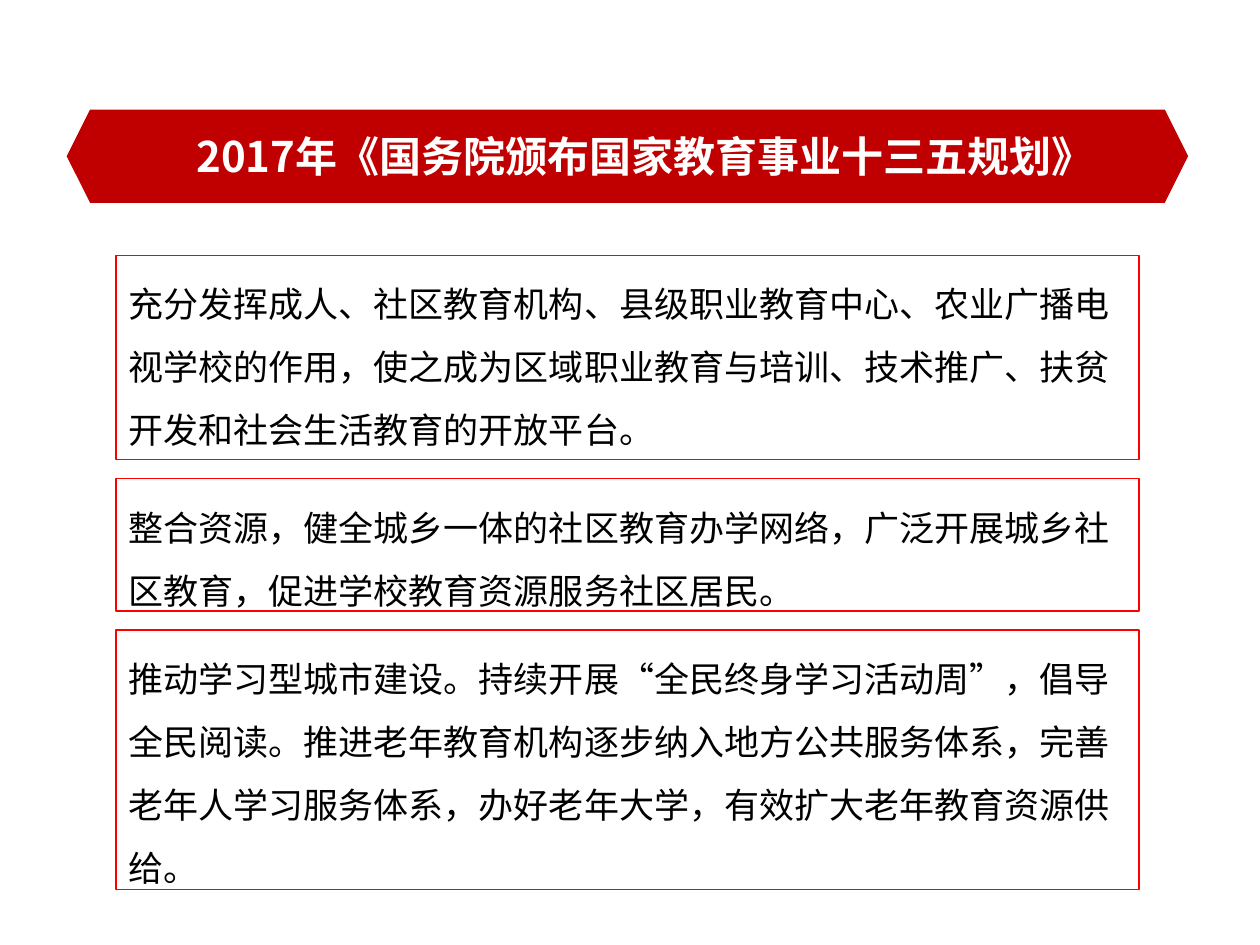
from pptx import Presentation
from pptx.dml.color import RGBColor
from pptx.enum.shapes import MSO_SHAPE
from pptx.enum.text import MSO_ANCHOR, MSO_AUTO_SIZE, PP_ALIGN
from pptx.oxml.ns import qn
from pptx.util import Inches, Pt

RECTANGLE, HEXAGON = MSO_SHAPE.RECTANGLE, MSO_SHAPE.HEXAGON
TOP, LEFT = MSO_ANCHOR.TOP, PP_ALIGN.LEFT
GROW = MSO_AUTO_SIZE.SHAPE_TO_FIT_TEXT

COLORS = {"banner": "C00000", "border": "FF0000", "body": "000000", "title": "FFFFFF"}
FONT = "Noto Sans CJK SC"
CELL = Inches(0.1)

TITLE = ["2017", "年《国务院颁布国家教育事业十三五规划》"]
MEASURES = [
    (16.2, "充分发挥成人、社区教育机构、县级职业教育中心、农业广播电视学校的作用，"
           "使之成为区域职业教育与培训、技术推广、扶贫开发和社会生活教育的开放平台。"),
    (10.5, "整合资源，健全城乡一体的社区教育办学网络，广泛开展城乡社区教育，"
           "促进学校教育资源服务社区居民。"),
    (20.6, "推动学习型城市建设。持续开展“全民终身学习活动周”，倡导全民阅读。"
           "推进老年教育机构逐步纳入地方公共服务体系，完善老年人学习服务体系，"
           "办好老年大学，有效扩大老年教育资源供给。"),
]
MEASURE_TOP, MEASURE_GAP = 20.3, 1.5


class Builder:
    def __init__(self, page):
        self.page = page

    def place(self, column, row, columns, rows):
        return [int(length * CELL) for length in (column, row, columns, rows)]

    def color(self, name):
        return RGBColor.from_string(COLORS[name])

    def add_text(self, shape, pieces, size, color, bold=False, spacing=1.0, wrap=True):
        frame = shape.text_frame
        frame.word_wrap = wrap
        frame.auto_size = GROW
        frame.vertical_anchor = TOP
        para = frame.paragraphs[0]
        para.alignment = LEFT
        para.line_spacing = spacing
        for piece in pieces:
            span = para.add_run()
            span.text = piece
            span.font.size = Pt(size)
            span.font.bold = bold
            span.font.color.rgb = self.color(color)
            span.font.name = FONT
            properties = span._r.get_or_add_rPr()
            properties.append(properties.makeelement(qn("a:ea"), {"typeface": FONT}))

    def banner(self, place, title_place, pieces):
        group = self.page.shapes.add_group_shape()
        ribbon = group.shapes.add_shape(HEXAGON, *self.place(*place))
        ribbon.shadow.inherit = False
        ribbon.fill.solid()
        ribbon.fill.fore_color.rgb = self.color("banner")
        ribbon.line.fill.background()
        title = group.shapes.add_textbox(*self.place(*title_place))
        self.add_text(title, pieces, 24, "title", bold=True, wrap=False)

    def measure(self, place, text):
        box = self.page.shapes.add_shape(RECTANGLE, *self.place(*place))
        box.shadow.inherit = False
        box.fill.background()
        box.line.color.rgb = self.color("border")
        box.line.width = Pt(0.75)
        self.add_text(box, [text], 20, "body", spacing=1.5)


def main():
    deck = Presentation()
    deck.slide_width, deck.slide_height = 100 * CELL, 75 * CELL
    builder = Builder(deck.slides.add_slide(deck.slide_layouts[6]))
    row = MEASURE_TOP
    for rows, text in MEASURES:
        builder.measure((9.2, row, 81.2, rows), text)
        row += rows + MEASURE_GAP
    builder.banner((5.3, 8.7, 89, 7.4), (14.6, 9.9, 74.3, 5), TITLE)
    deck.save("out.pptx")


if __name__ == "__main__":
    main()
